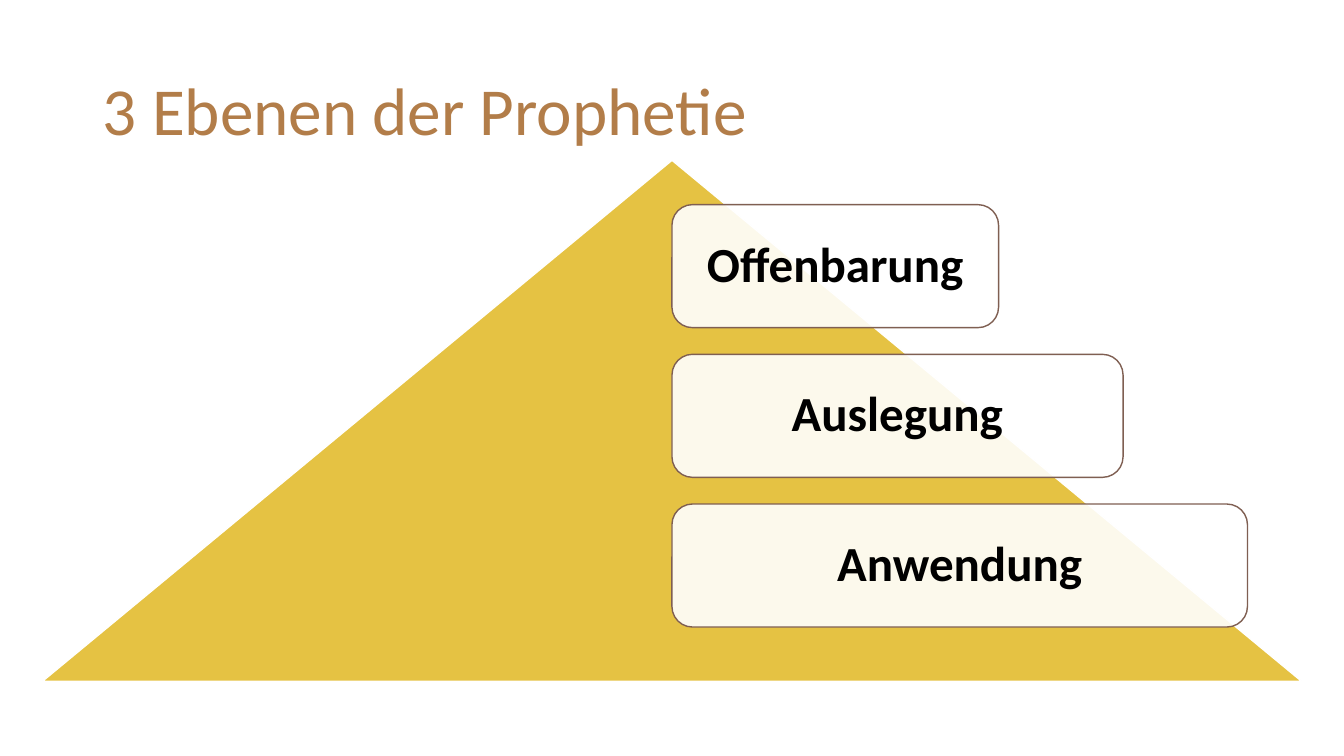
from lxml.etree import SubElement
from pptx import Presentation
from pptx.dml.color import RGBColor
from pptx.enum.shapes import MSO_SHAPE as Shape
from pptx.enum.text import MSO_ANCHOR as Anchor, MSO_AUTO_SIZE as AutoSize, PP_ALIGN as Align
from pptx.oxml.ns import qn
from pptx.util import Inches, Pt

WIDTH, HEIGHT = Inches(13.33), Inches(7.5)
COLUMN, ROW = WIDTH / 100, HEIGHT / 100
FONT = "Calibri"
BRONZE = RGBColor(0xB2, 0x7D, 0x49)
GOLD = RGBColor(0xE5, 0xC2, 0x43)
BROWN = RGBColor(0x7F, 0x5F, 0x52)
WHITE = RGBColor(0xFF, 0xFF, 0xFF)
BLACK = RGBColor(0, 0, 0)

LEVELS = ["Offenbarung", "Auslegung", "Anwendung"]
FIRST_TOP, TOP_STEP = 27.07, 19.8
FIRST_WIDTH, WIDTH_STEP = 24.3, 9.26
LEVEL_HEIGHT = 16.27


def grid(left, top, width, height):
    return int(left * COLUMN), int(top * ROW), int(width * COLUMN), int(height * ROW)


def write(frame, text, size, color, align, bold=False):
    frame.text = text
    frame.word_wrap = True
    frame.auto_size = AutoSize.NONE
    frame.vertical_anchor = Anchor.MIDDLE
    paragraph = frame.paragraphs[0]
    paragraph.alignment = align
    paragraph.line_spacing = 0.9
    font = paragraph.runs[0].font
    font.name, font.size, font.bold = FONT, Pt(size), bold
    font.color.rgb = color


def add_heading(slide, text):
    heading = slide.shapes.title
    heading.left, heading.top, heading.width, heading.height = grid(6.9, 5.33, 86.27, 19.33)
    write(heading.text_frame, text, 48, BRONZE, Align.LEFT)


def add_figure(slide, preset, box, fill, line):
    figure = slide.shapes.add_shape(preset, *grid(*box))
    figure.shadow.inherit = False
    figure.fill.solid()
    figure.fill.fore_color.rgb = fill
    figure.line.color.rgb = line
    figure.line.width = Pt(1)
    return figure


def add_level(slide, index, text):
    box = (50, FIRST_TOP + index * TOP_STEP, FIRST_WIDTH + index * WIDTH_STEP, LEVEL_HEIGHT)
    level = add_figure(slide, Shape.ROUNDED_RECTANGLE, box, WHITE, BROWN)
    tint = level.fill._xPr.find(qn("a:solidFill")).find(qn("a:srgbClr"))
    SubElement(tint, qn("a:alpha"), val="90000")
    frame = level.text_frame
    frame.margin_left = frame.margin_right = Inches(0.15)
    write(frame, text, 35, BLACK, Align.CENTER, bold=True)


def main():
    deck = Presentation()
    deck.slide_width, deck.slide_height = WIDTH, HEIGHT
    slide = deck.slides.add_slide(deck.slide_layouts[5])
    add_heading(slide, "3 Ebenen der Prophetie")
    add_figure(slide, Shape.ISOSCELES_TRIANGLE, (3.15, 21.2, 93.7, 68.93), GOLD, WHITE)
    for index, text in enumerate(LEVELS):
        add_level(slide, index, text)
    deck.save("out.pptx")


if __name__ == "__main__":
    main()
